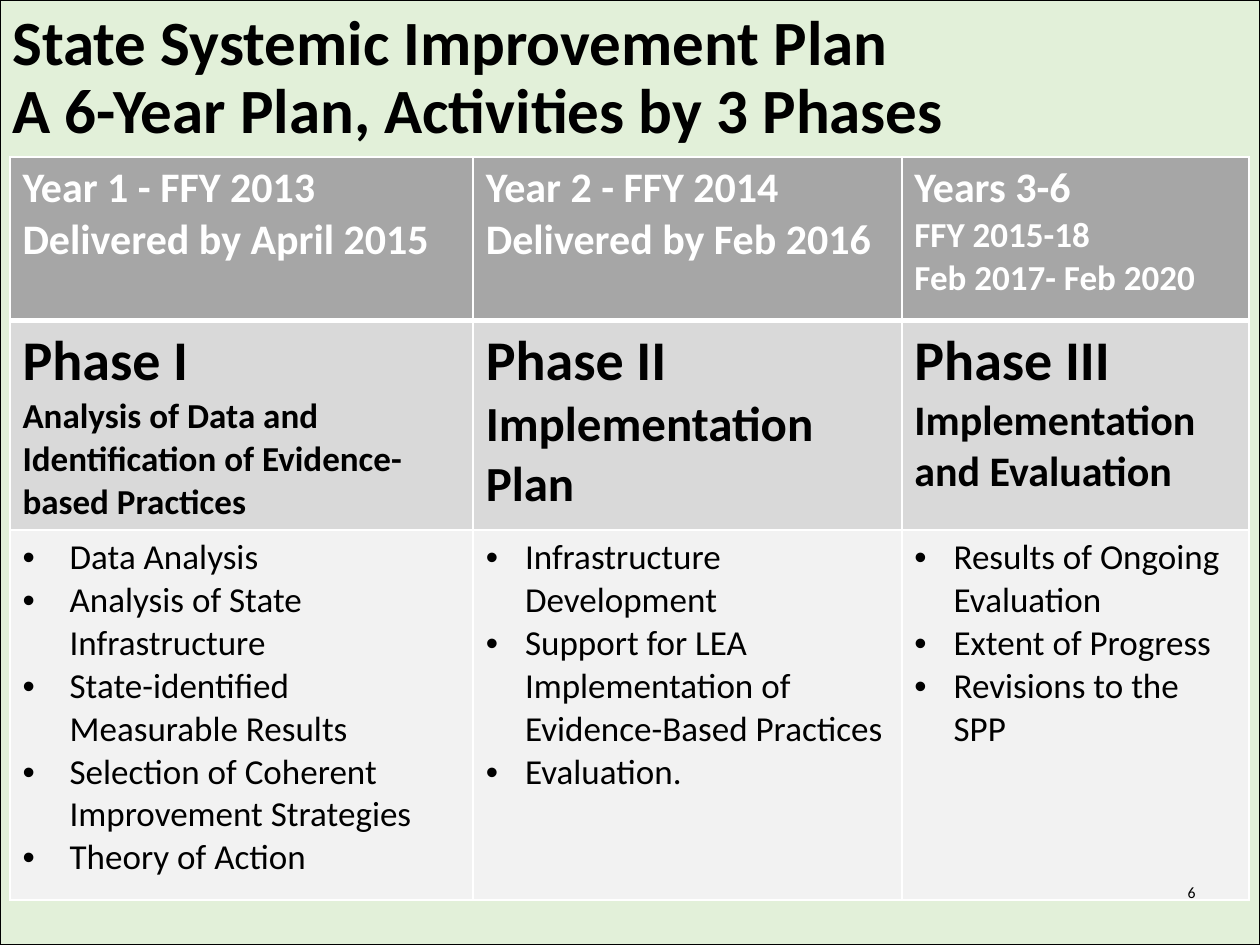
from lxml.etree import SubElement
from pptx import Presentation
from pptx.dml.color import RGBColor
from pptx.enum.shapes import MSO_SHAPE
from pptx.enum.text import MSO_ANCHOR, PP_ALIGN
from pptx.oxml.ns import qn
from pptx.util import Cm, Pt

BLACK = RGBColor(0x00, 0x00, 0x00)
WHITE = RGBColor(0xFF, 0xFF, 0xFF)
PALE_GREEN = RGBColor(0xE2, 0xF0, 0xD9)
ROW_FILLS = [RGBColor(0xA6, 0xA6, 0xA6), RGBColor(0xD9, 0xD9, 0xD9), RGBColor(0xF2, 0xF2, 0xF2)]


def write(para, text, size, color=BLACK, bold=False):
    """Fill a paragraph; a vertical tab in the text makes a line break."""
    para.text = text
    style = {"name": "Calibri", "size": Pt(size), "bold": bold}
    for span in para.runs:
        for name, value in style.items():
            setattr(span.font, name, value)
        span.font.color.rgb = color


def add_borders(cell, widths):
    """Draw white cell borders; widths maps each side to points."""
    properties = cell._tc.get_or_add_tcPr()
    for side, width in widths.items():
        line = SubElement(properties, qn(f"a:ln{side}"), w=str(Pt(width)))
        fill = SubElement(line, qn("a:solidFill"))
        SubElement(fill, qn("a:srgbClr"), val=str(WHITE))


deck = Presentation()
deck.slide_width, deck.slide_height = Cm(25.4), Cm(19.05)
page = deck.slides.add_slide(deck.slide_layouts[6])

# Background panel
panel = page.shapes.add_shape(MSO_SHAPE.RECTANGLE, 0, 0, deck.slide_width, deck.slide_height)
panel.shadow.inherit = False
panel.fill.solid()
panel.fill.fore_color.rgb = PALE_GREEN
panel.line.color.rgb = BLACK
panel.line.width = Pt(0.75)

# Table content: each cell is a list of (text, size)
headings = [
    [("Year 1 - FFY 2013", 24), ("Delivered by April 2015", 24)],
    [("Year 2 - FFY 2014", 24), ("Delivered by Feb 2016", 24)],
    [("Years 3-6", 24), ("FFY 2015-18", 20), ("Feb 2017- Feb 2020", 20)],
]
phases = [
    [("Phase I", 32), ("Analysis of Data and Identification of Evidence-based Practices", 20)],
    [("Phase II", 32), ("Implementation Plan", 28)],
    [("Phase III", 32), ("Implementation and Evaluation", 24)],
]
activities = [
    ["Data Analysis", "Analysis of State Infrastructure", "State-identified Measurable Results",
     "Selection of Coherent Improvement Strategies", "Theory of Action"],
    ["Infrastructure Development", "Support for LEA Implementation of Evidence-Based Practices",
     "Evaluation."],
    ["Results of Ongoing Evaluation", "Extent of Progress", "Revisions to the SPP"],
]
rows = [headings, phases, [[(item, 20) for item in items] for items in activities]]
column_widths = [9.34, 8.64, 7.0]
row_heights = [3.3, 4.15, 7.46]
bullet_indents = [0.95, 0.79, 0.79]

# Phase table
table = page.shapes.add_table(3, 3, Cm(0.2), Cm(3.16), Cm(sum(column_widths)),
                              Cm(sum(row_heights))).table
for column, width in zip(table.columns, column_widths):
    column.width = Cm(width)
for row, height in zip(table.rows, row_heights):
    row.height = Cm(height)

for row_index, row in enumerate(rows):
    is_heading, is_list = row_index == 0, row_index == 2
    for column_index, lines in enumerate(row):
        cell = table.cell(row_index, column_index)
        add_borders(cell, {"L": 1, "R": 1, "T": 3 if row_index == 1 else 1,
                           "B": 3 if is_heading else 1})
        cell.fill.solid()
        cell.fill.fore_color.rgb = ROW_FILLS[row_index]
        frame = cell.text_frame
        for line_index, (text, size) in enumerate(lines):
            para = frame.add_paragraph() if line_index else frame.paragraphs[0]
            write(para, text, size, WHITE if is_heading else BLACK, bold=not is_list)
            if is_list:
                indent = Cm(bullet_indents[column_index])
                properties = para._p.get_or_add_pPr()
                properties.set("marL", str(indent))
                properties.set("indent", str(-indent))
                SubElement(properties, qn("a:buFont"), typeface="Arial")
                SubElement(properties, qn("a:buChar"), char="•")

# Title and page number
title = "State Systemic Improvement Plan\vA 6-Year Plan, Activities by 3 Phases"
labels = [
    (title, (0, 0, 25.2, 3.18), 36, True, PP_ALIGN.LEFT, 0.9),
    ("6", (19.7, 17.35, 4.65, 1.27), 9, False, PP_ALIGN.RIGHT, 1.0),
]
for text, place, size, bold, alignment, spacing in labels:
    box = page.shapes.add_textbox(*[Cm(length) for length in place])
    frame = box.text_frame
    frame.word_wrap = True
    frame.vertical_anchor = MSO_ANCHOR.MIDDLE
    para = frame.paragraphs[0]
    para.alignment = alignment
    para.line_spacing = spacing
    write(para, text, size, bold=bold)

deck.save("out.pptx")
